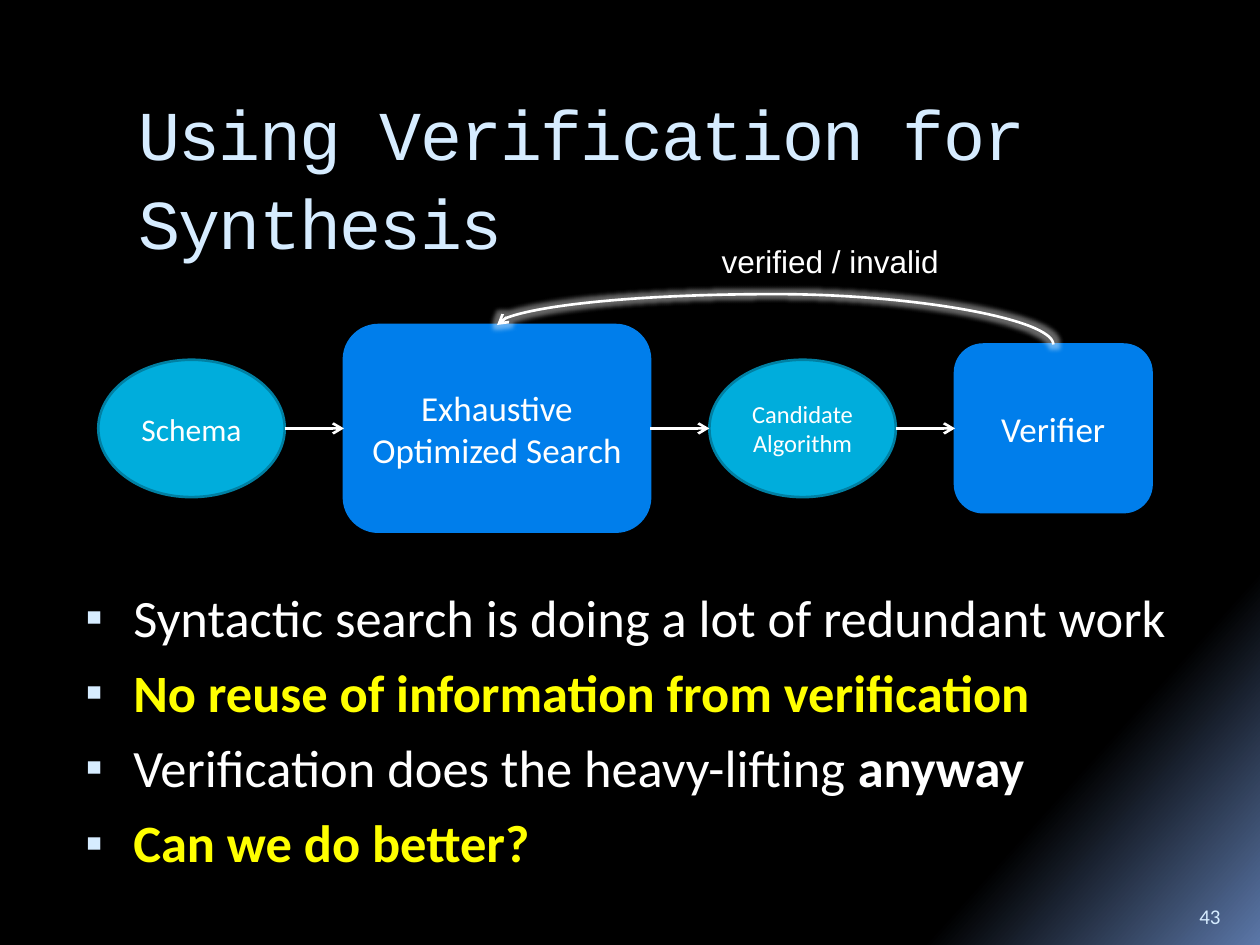
from dataclasses import dataclass

from lxml import etree
from pptx import Presentation
from pptx.dml.color import RGBColor
from pptx.enum.shapes import MSO_CONNECTOR, MSO_SHAPE
from pptx.enum.text import MSO_ANCHOR, PP_ALIGN
from pptx.oxml.ns import qn
from pptx.util import Inches, Pt

ROUNDED, OVAL = MSO_SHAPE.ROUNDED_RECTANGLE, MSO_SHAPE.OVAL
STRAIGHT, CURVE = MSO_CONNECTOR.STRAIGHT, MSO_CONNECTOR.CURVE
TOP, MIDDLE, BOTTOM = MSO_ANCHOR.TOP, MSO_ANCHOR.MIDDLE, MSO_ANCHOR.BOTTOM
CENTER = PP_ALIGN.CENTER
LEFT_SIDE, RIGHT_SIDE = 1, 3
COLUMNS, ROWS = 1000, 750


@dataclass(frozen=True)
class Theme:
    black: str = "000000"
    white: str = "FFFFFF"
    pale: str = "D6ECFF"
    corner: str = "5B77A8"
    process: str = "007EEB"
    data: str = "00ADDC"
    data_edge: str = "0080A3"
    highlight: str = "FFFF00"
    heading_font: str = "Courier New"
    body_font: str = "Calibri"
    label_font: str = "Arial"
    heading_size: int = 40
    body_size: int = 30
    process_size: int = 20
    label_size: int = 18
    small_size: int = 14
    number_size: int = 12
    stroke: float = 1.5


THEME = Theme()


@dataclass(frozen=True)
class Box:
    left: float
    top: float
    width: float
    height: float

    @property
    def middle(self):
        return self.top + self.height / 2

    @property
    def right(self):
        return self.left + self.width

    def inner(self, left, top, width, height):
        return Box(self.left + left, self.top + top, width, height)

    def lengths(self):
        return [grid(n) for n in (self.left, self.top, self.width, self.height)]


def grid(units):
    return Inches(units * 10 / COLUMNS)


def rgb(code):
    return RGBColor.from_string(code)


def apply(target, values):
    for name, value in values.items():
        setattr(target, name, value)


def add_run(paragraph, text, size, color=THEME.white, font=THEME.body_font, bold=False):
    run = paragraph.add_run()
    run.text = text
    apply(run.font, {"size": Pt(size), "name": font, "bold": bold})
    run.font.color.rgb = rgb(color)
    return run


def add_text_box(slide, box, anchor=TOP, wrap=True):
    frame = slide.shapes.add_textbox(*box.lengths()).text_frame
    apply(frame, {"word_wrap": wrap, "vertical_anchor": anchor})
    return frame


def paint_background(slide):
    fill = slide.background.fill
    fill.gradient()
    fill.gradient_angle = 318
    for stop, (position, color) in zip(
        fill.gradient_stops, ((0.84, THEME.black), (1, THEME.corner))
    ):
        stop.position = position
        stop.color.rgb = rgb(color)


def add_title(slide, box):
    frame = add_text_box(slide, box)
    paragraph = frame.paragraphs[0]
    paragraph.line_spacing = 1.06
    run = add_run(paragraph, "Using Verification for Synthesis",
                  THEME.heading_size, THEME.pale, THEME.heading_font)
    run.font._element.set("spc", "-100")


def add_node(slide, box, kind, lines, size):
    fill, edge = {
        ROUNDED: (THEME.process, THEME.process),
        OVAL: (THEME.data, THEME.data_edge),
    }[kind]
    node = slide.shapes.add_shape(kind, *box.lengths())
    node.shadow.inherit = False
    node.fill.solid()
    node.fill.fore_color.rgb = rgb(fill)
    node.line.color.rgb = rgb(edge)
    node.line.width = Pt(THEME.stroke)
    frame = node.text_frame
    apply(frame, {"word_wrap": True, "vertical_anchor": MIDDLE})
    for index, line in enumerate(lines):
        paragraph = frame.add_paragraph() if index else frame.paragraphs[0]
        paragraph.alignment = CENTER
        add_run(paragraph, line, size)
    return node


def add_arrow(slide, kind, start, end):
    arrow = slide.shapes.add_connector(kind, *(grid(n) for n in (*start, *end)))
    arrow.line.color.rgb = rgb(THEME.white)
    arrow.line.width = Pt(THEME.stroke)
    properties = arrow._element.spPr
    etree.SubElement(properties.find(qn("a:ln")), qn("a:tailEnd"), type="arrow")
    effects = etree.SubElement(properties, qn("a:effectLst"))
    return arrow, effects


def add_feedback(slide, start, end, rise):
    (start_x, start_y), (end_x, end_y) = start, end
    center_x, center_y = (start_x + end_x) / 2, (start_y + end_y) / 2
    drop, span = start_y - end_y, start_x - end_x
    arrow, effects = add_arrow(
        slide, CURVE,
        (center_x - drop / 2, center_y + span / 2),
        (center_x + drop / 2, center_y - span / 2),
    )
    properties = arrow._element.spPr
    properties.find(qn("a:xfrm")).set("rot", str(270 * 60000))
    geometry = properties.find(qn("a:prstGeom"))
    guides = geometry.find(qn("a:avLst"))
    if guides is None:
        guides = etree.SubElement(geometry, qn("a:avLst"))
    etree.SubElement(guides, qn("a:gd"), name="adj1",
                     fmla=f"val {round(rise / drop * 100000)}")
    glow = etree.SubElement(effects, qn("a:glow"), rad=str(Pt(5)))
    color = etree.SubElement(glow, qn("a:srgbClr"), val=THEME.white)
    etree.SubElement(color, qn("a:alpha"), val="40000")


def add_flow(slide, box):
    steps = (
        (OVAL, 148, 109, ["Schema"], THEME.label_size),
        (ROUNDED, 243, 164, ["Exhaustive Optimized Search"], THEME.process_size),
        (OVAL, 148, 109, ["Candidate", "Algorithm"], THEME.small_size),
        (ROUNDED, 156, 133, ["Verifier"], THEME.process_size),
    )
    gap = (box.width - sum(step[1] for step in steps)) / (len(steps) - 1)
    axis, offset, placed = 153, 0, []
    for kind, width, height, lines, size in steps:
        area = box.inner(offset, axis - height / 2, width, height)
        placed.append((kind, area, add_node(slide, area, kind, lines, size)))
        offset += width + gap
    for (kind, area, node), (next_kind, next_area, next_node) in zip(placed, placed[1:]):
        arrow, _ = add_arrow(slide, STRAIGHT, (area.right, area.middle),
                             (next_area.left, next_area.middle))
        if kind == ROUNDED:
            arrow.begin_connect(node, RIGHT_SIDE)
        if next_kind == ROUNDED:
            arrow.end_connect(next_node, LEFT_SIDE)
    search, verifier = placed[1][1], placed[3][1]
    add_feedback(slide, (verifier.left + verifier.width / 2, verifier.top),
                 (search.left + search.width / 2, search.top), 40)
    label = add_text_box(slide, box.inner(485, 0, 197, 40), wrap=False)
    add_run(label.paragraphs[0], "verified / invalid",
            THEME.label_size, font=THEME.label_font)


def add_bullet(paragraph):
    properties = paragraph._p.get_or_add_pPr()
    for name, value in {"marL": Inches(0.45), "indent": Inches(-0.38)}.items():
        properties.set(name, str(value))
    color = etree.SubElement(properties, qn("a:buClr"))
    etree.SubElement(color, qn("a:srgbClr"), val=THEME.pale)
    etree.SubElement(properties, qn("a:buSzPct"), val="95000")
    etree.SubElement(properties, qn("a:buFont"), typeface=THEME.label_font)
    etree.SubElement(properties, qn("a:buChar"), char="▪")


def add_points(slide, box):
    points = (
        [("Syntactic search is doing a lot of redundant work", THEME.white, False)],
        [("No reuse of information from verification", THEME.highlight, True)],
        [("Verification does the heavy-lifting ", THEME.white, False),
         ("anyway", THEME.white, True)],
        [("Can we do better?", THEME.highlight, True)],
    )
    frame = add_text_box(slide, box)
    for index, pieces in enumerate(points):
        paragraph = frame.add_paragraph() if index else frame.paragraphs[0]
        add_bullet(paragraph)
        paragraph.space_before = Pt(7 if index else 0)
        for text, color, bold in pieces:
            add_run(paragraph, text, THEME.body_size, color, bold=bold)


def add_page_number(slide, box):
    frame = add_text_box(slide, box, BOTTOM)
    add_run(frame.paragraphs[0], "43", THEME.number_size, THEME.pale)


def main():
    deck = Presentation()
    apply(deck, {"slide_width": grid(COLUMNS), "slide_height": grid(ROWS)})
    slide = deck.slides.add_slide(deck.slide_layouts[6])
    page = Box(0, 0, COLUMNS, ROWS)
    paint_background(slide)
    add_title(slide, page.inner(100, 63, 850, 140))
    add_flow(slide, page.inner(78, 187, 836, 235))
    add_points(slide, page.inner(51, 459, 900, 215))
    add_page_number(slide, page.inner(942, 702, 50, 40))
    deck.save("out.pptx")


if __name__ == "__main__":
    main()
